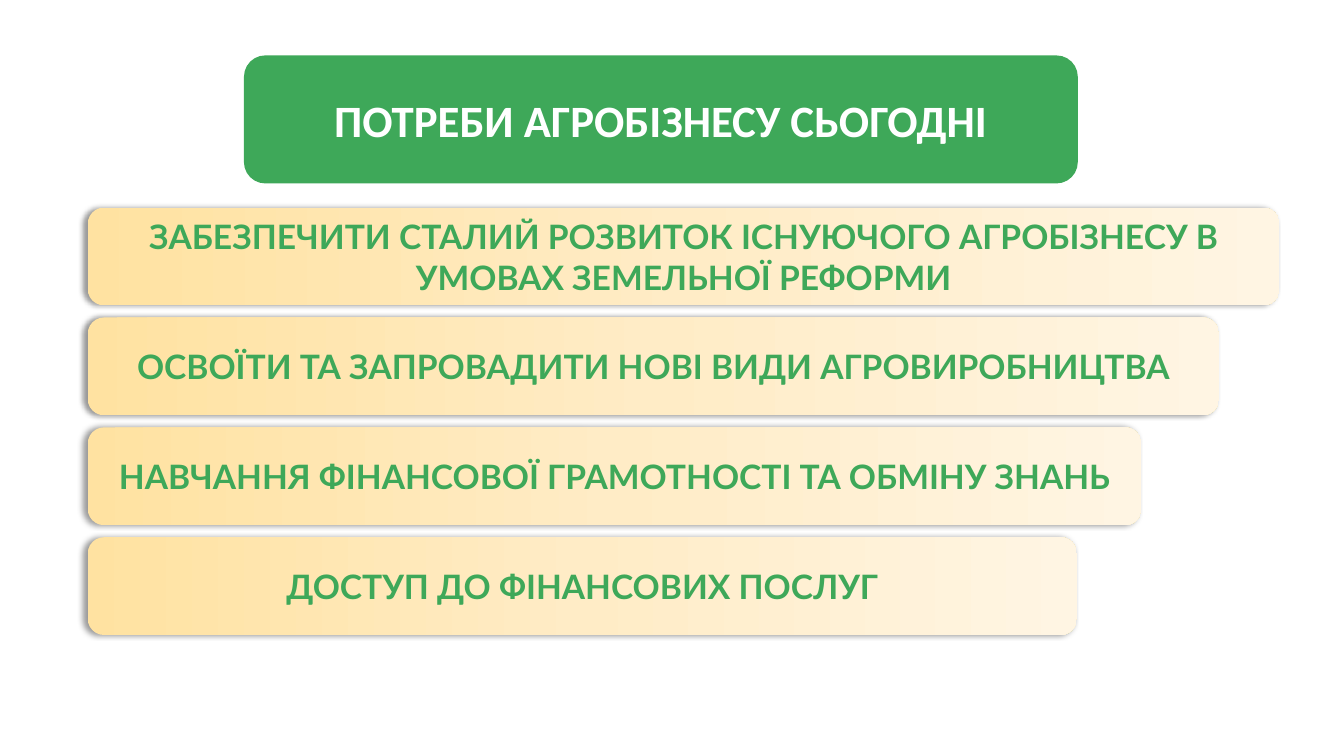
from lxml.etree import SubElement
from pptx import Presentation
from pptx.dml.color import RGBColor
from pptx.enum.shapes import MSO_SHAPE
from pptx.enum.text import MSO_ANCHOR, PP_ALIGN
from pptx.oxml.ns import qn
from pptx.util import Inches, Pt

GREEN, WHITE = "3EA859", "FFFFFF"
GRADIENT = [(0, "FFE2A1"), (50, "FFECC6"), (100, "FFF5E3")]

# Rows of needs: common left edge, even pitch, shrinking width
LEFT, TOP, PITCH, HEIGHT = 0.87, 2.06, 1.09, 0.97
NEEDS = [
    ("ЗАБЕЗПЕЧИТИ СТАЛИЙ РОЗВИТОК ІСНУЮЧОГО АГРОБІЗНЕСУ В УМОВАХ ЗЕМЕЛЬНОЇ РЕФОРМИ", 11.82),
    ("ОСВОЇТИ ТА ЗАПРОВАДИТИ НОВІ ВИДИ АГРОВИРОБНИЦТВА", 11.22),
    ("НАВЧАННЯ ФІНАНСОВОЇ ГРАМОТНОСТІ ТА ОБМІНУ ЗНАНЬ", 10.45),
    ("ДОСТУП ДО ФІНАНСОВИХ ПОСЛУГ", 9.81),
]


def rgb(value):
    return RGBColor.from_string(value)


def add_panel(slide, box, text, font_name, size, color):
    """Rounded panel with centred bold text."""
    shape = slide.shapes.add_shape(MSO_SHAPE.ROUNDED_RECTANGLE, *map(Inches, box))
    shape.shadow.inherit = False
    shape.line.fill.background()
    text_frame = shape.text_frame
    text_frame.word_wrap = True
    text_frame.vertical_anchor = MSO_ANCHOR.MIDDLE
    text_frame.text = text
    paragraph = text_frame.paragraphs[0]
    paragraph.alignment = PP_ALIGN.CENTER
    font = paragraph.runs[0].font
    font.name, font.size, font.bold = font_name, Pt(size), True
    font.color.rgb = rgb(color)
    return shape


def set_gradient(shape, stops):
    """Left-to-right gradient with any number of stops."""
    shape.fill.gradient()
    shape.fill.gradient_angle = 0
    stop_list = shape.element.spPr.find(".//" + qn("a:gsLst"))
    for stop in list(stop_list):
        stop_list.remove(stop)
    for percent, color in stops:
        stop = SubElement(stop_list, qn("a:gs"), pos=str(percent * 1000))
        SubElement(stop, qn("a:srgbClr"), val=color)


def set_left_shadow(shape):
    """Soft black shadow cast to the left."""
    effects = shape.element.spPr.find(qn("a:effectLst"))
    shadow = SubElement(effects, qn("a:outerShdw"), blurRad=str(Pt(4)),
                        dist=str(Pt(3)), dir=str(180 * 60000),
                        algn="r", rotWithShape="0")
    color = SubElement(shadow, qn("a:srgbClr"), val="000000")
    SubElement(color, qn("a:alpha"), val="40000")


def add_need(slide, row, text, width):
    box = (LEFT, TOP + row * PITCH, width, HEIGHT)
    shape = add_panel(slide, box, text, "Lato", 24, GREEN)
    set_gradient(shape, GRADIENT)
    set_left_shadow(shape)


def main():
    presentation = Presentation()
    presentation.slide_width = Inches(13.33)
    presentation.slide_height = Inches(7.5)
    slide = presentation.slides.add_slide(presentation.slide_layouts[6])

    # Title panel
    title = add_panel(slide, (2.42, 0.55, 8.27, 1.27),
                      "ПОТРЕБИ АГРОБІЗНЕСУ СЬОГОДНІ", "Calibri", 32, WHITE)
    title.fill.solid()
    title.fill.fore_color.rgb = rgb(GREEN)

    # Needs
    for row, (text, width) in enumerate(NEEDS):
        add_need(slide, row, text, width)

    presentation.save("out.pptx")


if __name__ == "__main__":
    main()
